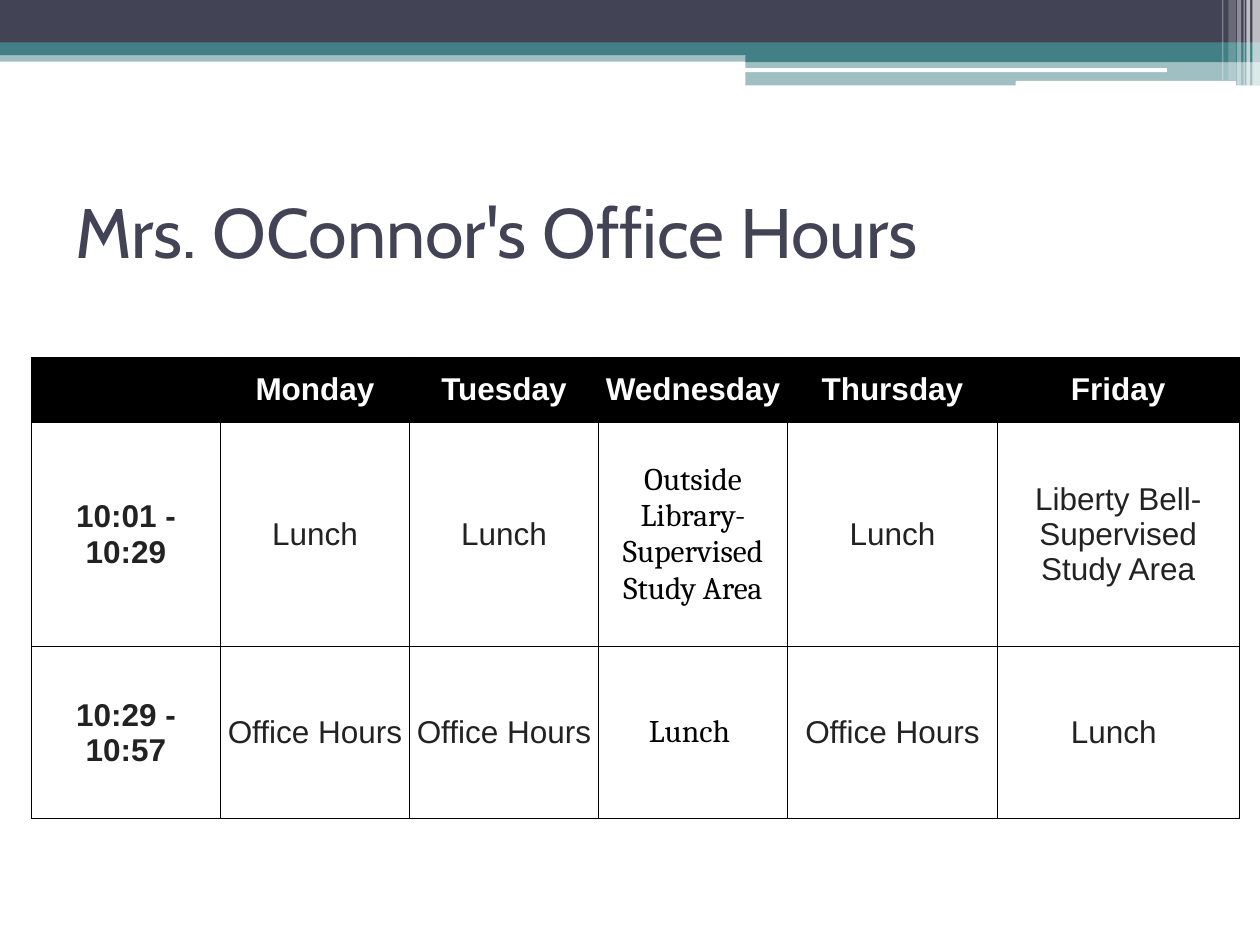
"""Build the office hours slide with its banded header and weekly table."""
from lxml.etree import SubElement
from pptx import Presentation
from pptx.dml.color import RGBColor
from pptx.enum.shapes import MSO_SHAPE
from pptx.enum.text import MSO_ANCHOR, PP_ALIGN
from pptx.oxml import parse_xml
from pptx.oxml.ns import nsdecls, qn
from pptx.util import Pt

COLORS = {"navy": "424456", "teal": "438086", "white": "FFFFFF", "black": "000000", "text": "222222"}


def set_font(r, name, size, color, bold=False):
    values = {"name": name, "size": Pt(size), "bold": bold}
    for key, value in values.items():
        setattr(r.font, key, value)
    r.font.color.rgb = RGBColor.from_string(COLORS[color])


prs = Presentation()
prs.slide_width, prs.slide_height = Pt(720), Pt(540)
s = prs.slides.add_slide(prs.slide_layouts[6])

RECT, ROUND = MSO_SHAPE.RECTANGLE, MSO_SHAPE.ROUNDED_RECTANGLE
bands = [
    (RECT, 0, 28.8, 720, 6.5, "teal", 50),
    (RECT, 0, 0, 720, 24.5, "navy", 100),
    (RECT, 0, 24.3, 720, 7.2, "teal", 100),
    (RECT, 426, 28.3, 294, 7.2, "teal", 100),
    (RECT, 426, 35.3, 294, 13.6, "teal", 50),
    (ROUND, 425.6, 39, 241.2, 2.2, "white", 100),
    (ROUND, 580.4, 46.3, 126, 2.9, "white", 100),
]
stripes = [
    (715.6, 4.4, 49, 65),
    (712.2, 2.2, 49, 65),
    (710.6, 0.72, 49, 60),
    (707, 2.2, 49, 40),
    (702, 4.3, 46, 20),
    (698.4, 0.72, 46, 30),
]
bands += [(RECT, x, 0, w, h, "white", alpha) for x, w, h, alpha in stripes]

for kind, x, y, w, h, color, alpha in bands:
    sp = s.shapes.add_shape(kind, Pt(x), Pt(y), Pt(w), Pt(h))
    sp.shadow.inherit = False
    sp.line.fill.background()
    sp.fill.solid()
    sp.fill.fore_color.rgb = RGBColor.from_string(COLORS[color])
    if alpha < 100:
        clr = sp.fill._xPr.find(qn("a:solidFill"))[0]
        SubElement(clr, qn("a:alpha"), val=str(alpha * 1000))

tf = s.shapes.add_textbox(Pt(36), Pt(90), Pt(648), Pt(84)).text_frame
tf.word_wrap = True
tf.vertical_anchor = MSO_ANCHOR.MIDDLE
r = tf.paragraphs[0].add_run()
r.text = "Mrs. OConnor's Office Hours"
set_font(r, "Cabin", 40, "navy")

rows = [
    ["", "Monday", "Tuesday", "Wednesday", "Thursday", "Friday"],
    ["10:01 - 10:29", "Lunch", "Lunch", "Outside Library- Supervised Study Area",
     "Lunch", "Liberty Bell- Supervised Study Area"],
    ["10:29 - 10:57", "Office Hours ", "Office Hours", "Lunch ", "Office Hours", "Lunch "],
]
widths = [108, 108, 108, 108, 120, 138]
heights = [37.5, 128, 98.5]
cell_format = {"vertical_anchor": MSO_ANCHOR.MIDDLE}
for side in ("left", "right", "top", "bottom"):
    cell_format["margin_" + side] = Pt(3)

table = s.shapes.add_table(len(rows), len(widths), Pt(18), Pt(204),
                           Pt(sum(widths)), Pt(sum(heights))).table
for col, width in zip(table.columns, widths):
    col.width = Pt(width)
for row, height in zip(table.rows, heights):
    row.height = Pt(height)

for i, texts in enumerate(rows):
    for j, text in enumerate(texts):
        cell = table.cell(i, j)
        for key, value in cell_format.items():
            setattr(cell, key, value)
        cell.fill.solid()
        cell.fill.fore_color.rgb = RGBColor.from_string(COLORS["white" if i else "black"])
        tcPr = cell._tc.get_or_add_tcPr()
        for n, edge in enumerate(("lnL", "lnR", "lnT", "lnB")):
            tcPr.insert(n, parse_xml(
                f'<a:{edge} {nsdecls("a")} w="{Pt(0.57)}"><a:solidFill>'
                f'<a:srgbClr val="{COLORS["black"]}"/></a:solidFill></a:{edge}>'))
        if text:
            p = cell.text_frame.paragraphs[0]
            p.alignment = PP_ALIGN.CENTER
            r = p.add_run()
            r.text = text
            serif = i > 0 and j == 3
            color = "white" if i == 0 else "black" if serif else "text"
            set_font(r, "Cambria" if serif else "Arial", 18, color, i == 0 or j == 0)

prs.save("out.pptx")
